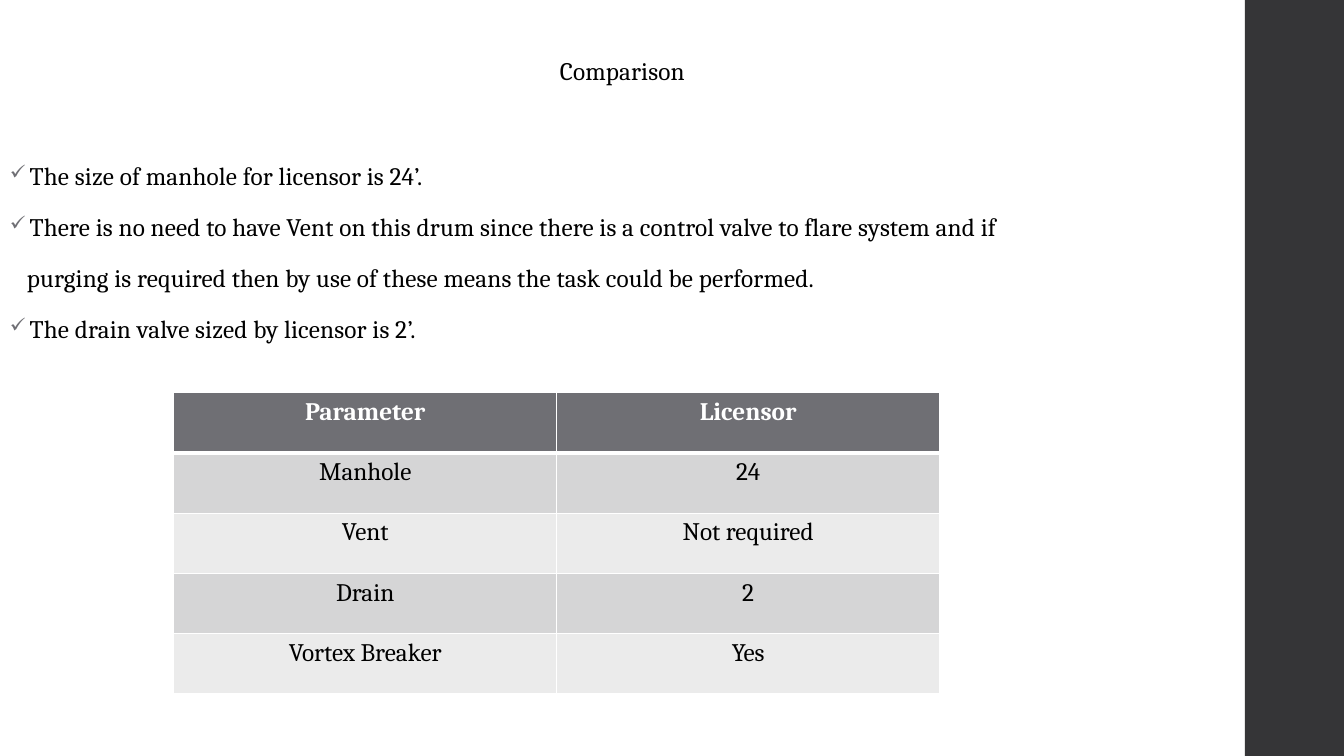
"""Build the licensor comparison slide."""
import pptx
import pptx.dml.color
import pptx.enum.shapes
import pptx.enum.text
import pptx.oxml
import pptx.oxml.ns
import pptx.util
from pptx.util import Cm

FONT = "Cambria"
SIZE = 18
GREY = "6F6F74"
BANDS = ("D5D5D6", "EBEBEB")
POINTS = (
    ("The size of manhole for licensor is 24’.", True),
    ("There is no need to have Vent on this drum since there is a control valve to flare system and if", True),
    ("purging is required then by use of these means the task could be performed.", False),
    ("The drain valve sized by licensor is 2’.", True),
)
ROWS = (
    ("Parameter", "Licensor"),
    ("Manhole", "24"),
    ("Vent", "Not required"),
    ("Drain", "2"),
    ("Vortex Breaker", "Yes"),
)


def rgb(value):
    """Turn a hex string into a colour."""
    return pptx.dml.color.RGBColor.from_string(value)


def element(xml):
    """Parse a DrawingML fragment whose root declares the a prefix."""
    return pptx.oxml.parse_xml(xml.replace(" ", f' {pptx.oxml.ns.nsdecls("a")} ', 1))


def format_runs(p, color="000000", bold=False, spacing=None):
    """Format every run of a paragraph."""
    for r in p.runs:
        r.font.name = FONT
        r.font.size = pptx.util.Pt(SIZE)
        r.font.bold = bold
        r.font.color.rgb = rgb(color)
        if spacing:
            r._r.get_or_add_rPr().set("spc", str(spacing))


def add_side_band(slide):
    """Add the dark band on the right edge."""
    sp = slide.shapes.add_shape(
        pptx.enum.shapes.MSO_SHAPE.RECTANGLE, Cm(31.37), 0, Cm(2.5), Cm(19.05))
    sp.shadow.inherit = False
    sp.fill.solid()
    sp.fill.fore_color.rgb = rgb("353537")
    sp.line.fill.background()


def set_title(slide, text):
    """Place and format the title placeholder."""
    sp = slide.shapes.title
    sp.left, sp.top, sp.width, sp.height = Cm(0), Cm(0.9), Cm(31.37), Cm(1.8)
    tf = sp.text_frame
    tf.text = text
    tf.vertical_anchor = pptx.enum.text.MSO_ANCHOR.MIDDLE
    p = tf.paragraphs[0]
    p.alignment = pptx.enum.text.PP_ALIGN.CENTER
    p.line_spacing = 0.95
    format_runs(p, spacing=10)


def add_check(pPr):
    """Give a paragraph a hanging check mark."""
    pPr.set("marL", str(Cm(0.5)))
    pPr.set("indent", str(Cm(-0.5)))
    pPr.append(element(f'<a:buClr ><a:srgbClr val="{GREY}"/></a:buClr>'))
    pPr.append(element('<a:buSzPct val="80000"/>'))
    pPr.append(element('<a:buChar char="✓"/>'))


def add_points(slide, points):
    """Add the check-marked remarks."""
    tf = slide.shapes.add_textbox(Cm(0), Cm(3.96), Cm(31.37), Cm(5.2)).text_frame
    tf.word_wrap = True
    for i, (text, checked) in enumerate(points):
        p = tf.add_paragraph() if i else tf.paragraphs[0]
        p.text = text
        p.line_spacing = 0.95
        p.space_after = pptx.util.Pt(16)
        pPr = p._p.get_or_add_pPr()
        if checked:
            add_check(pPr)
        else:
            pPr.set("marL", str(Cm(0.43)))
        format_runs(p, spacing=10)


def format_cell(cell, fill, borders):
    """Set the white borders (side to points) and the fill of a cell."""
    tcPr = cell._tc.get_or_add_tcPr()
    for side, width in borders.items():
        tcPr.append(element(
            f'<a:ln{side} w="{pptx.util.Pt(width)}"><a:solidFill>'
            f'<a:srgbClr val="FFFFFF"/></a:solidFill></a:ln{side}>'))
    cell.fill.solid()
    cell.fill.fore_color.rgb = rgb(fill)


def add_comparison(slide, rows):
    """Add the parameter table with a header and banded rows."""
    table = slide.shapes.add_table(
        len(rows), len(rows[0]), Cm(4.38), Cm(9.89), Cm(19.3), Cm(7.6)).table
    for i, row in enumerate(rows):
        header = i == 0
        fill = GREY if header else BANDS[(i - 1) % 2]
        borders = {"L": 1, "R": 1, "T": 3 if i == 1 else 1, "B": 3 if header else 1}
        for j, text in enumerate(row):
            cell = table.cell(i, j)
            cell.text = text
            p = cell.text_frame.paragraphs[0]
            p.alignment = pptx.enum.text.PP_ALIGN.CENTER
            format_runs(p, "FFFFFF" if header else "000000", header)
            format_cell(cell, fill, borders)


def main():
    """Build and save the slide."""
    prs = pptx.Presentation()
    prs.slide_width, prs.slide_height = Cm(33.87), Cm(19.05)
    slide = prs.slides.add_slide(prs.slide_layouts[5])
    add_side_band(slide)
    set_title(slide, "Comparison")
    add_points(slide, POINTS)
    add_comparison(slide, ROWS)
    prs.save("out.pptx")


if __name__ == "__main__":
    main()
